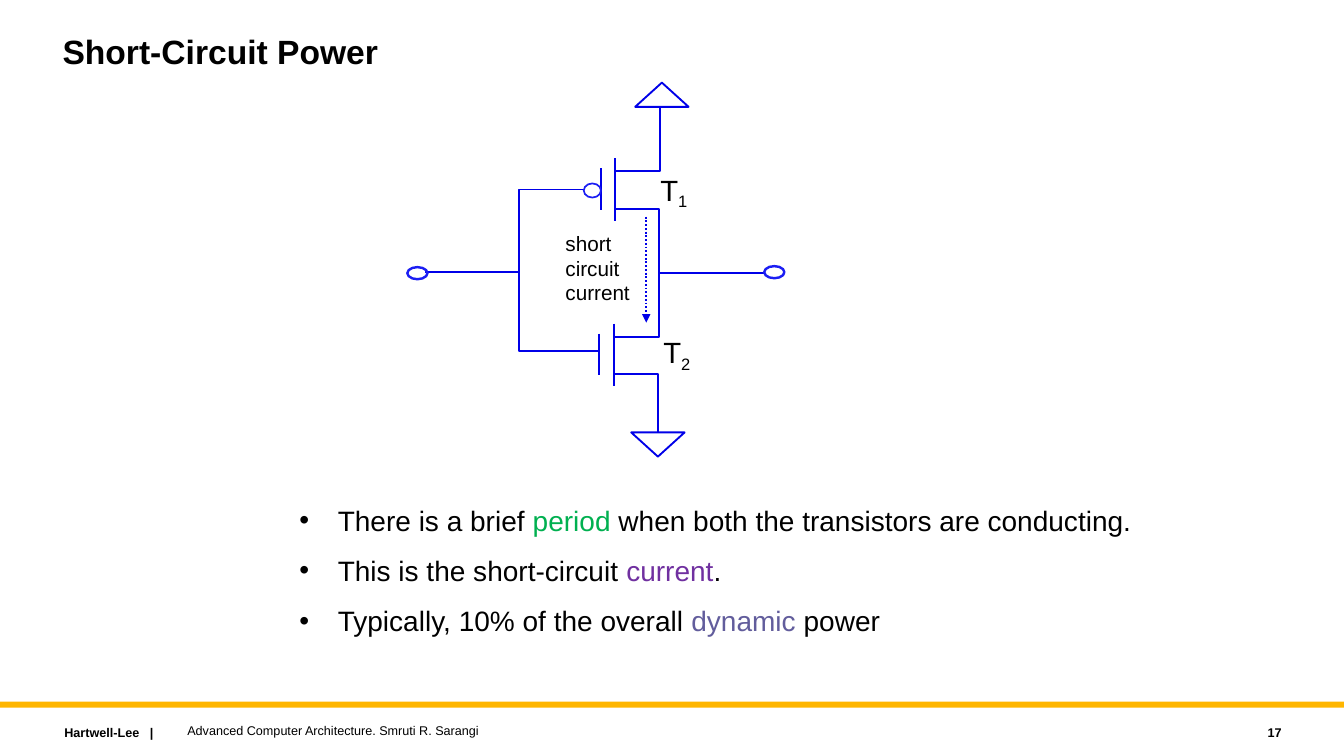
from lxml.etree import SubElement
from pptx import Presentation
from pptx.dml.color import RGBColor
from pptx.enum.dml import MSO_LINE
from pptx.enum.shapes import MSO_CONNECTOR, MSO_SHAPE
from pptx.enum.text import MSO_ANCHOR as ANCHOR, MSO_AUTO_SIZE, PP_ALIGN as ALIGN
from pptx.oxml.ns import qn
from pptx.util import Inches, Pt

BLACK, WIRE, TERMINAL = "000000", "0000E8", "1B1EF3"

WIRES = [
    [(4.22, 2.7), (5.15, 2.7)],
    [(5.79, 1.88), (5.15, 1.88), (5.15, 3.48), (5.94, 3.48)],
    [(5.96, 1.67), (5.96, 2.08)],
    [(6.1, 1.57), (6.1, 2.19)],
    [(6.1, 1.7), (6.55, 1.7), (6.55, 1.06)],
    [(6.1, 2.07), (6.54, 2.07), (6.54, 3.34), (6.09, 3.34)],
    [(5.94, 3.31), (5.94, 3.72)],
    [(6.09, 3.21), (6.09, 3.83)],
    [(6.09, 3.71), (6.53, 3.71), (6.53, 4.29)],
    [(6.54, 2.71), (7.58, 2.71)],
]
BULLETS = [
    [("There is a brief ", BLACK), ("period", "00B050"),
     (" when both the transistors are conducting.", BLACK)],
    [("This is the short-circuit ", BLACK), ("current", "7030A0"), (".", BLACK)],
    [("Typically, 10% of the overall ", BLACK), ("dynamic ", "625D9C"), ("power", BLACK)],
]


def color(value):
    """Turn a hex string into a colour."""
    return RGBColor.from_string(value)


def place(shape, box):
    """Move and size a shape to left, top, width and height in inches."""
    for name, value in zip(("left", "top", "width", "height"), box):
        setattr(shape, name, Inches(value))


def apply(target, values):
    """Set attributes from a dict of format values."""
    for name, value in values.items():
        setattr(target, name, value)


def add_run(paragraph, text, size, hex_color=BLACK, bold=False):
    """Append a formatted run to a paragraph."""
    run = paragraph.add_run()
    run.text = text
    apply(run.font, {"name": "Arial", "size": Pt(size), "bold": bold})
    run.font.color.rgb = color(hex_color)
    return run


def add_text(slide, box, lines, size, bold=False, wrap=True,
             anchor=ANCHOR.TOP, **paragraph_format):
    """Add a text box with one paragraph per line and return its frame."""
    frame = slide.shapes.add_textbox(*map(Inches, box)).text_frame
    apply(frame, {"word_wrap": wrap, "vertical_anchor": anchor})
    for index, line in enumerate(lines):
        paragraph = frame.add_paragraph() if index else frame.paragraphs[0]
        apply(paragraph, paragraph_format)
        add_run(paragraph, line, size, bold=bold)
    return frame


def style_line(shape, hex_color=WIRE, width=1.33):
    """Set the colour and width of an outline."""
    shape.line.color.rgb = color(hex_color)
    shape.line.width = Pt(width)


def add_outline(slide, kind, box, hex_color=WIRE, width=1.33, rotation=0):
    """Add an unfilled preset shape."""
    shape = slide.shapes.add_shape(kind, *map(Inches, box))
    shape.shadow.inherit = False
    shape.fill.background()
    shape.rotation = rotation
    style_line(shape, hex_color, width)


def add_line(slide, start, end):
    """Add a straight wire between two points."""
    line = slide.shapes.add_connector(
        MSO_CONNECTOR.STRAIGHT, *map(Inches, (*start, *end)))
    SubElement(line._element.spPr, qn("a:effectLst"))
    style_line(line)
    return line


def add_wire(slide, points):
    """Add a wire through points, bent where there are more than two."""
    if len(points) == 2:
        add_line(slide, *points)
        return
    corners = [(Inches(x), Inches(y)) for x, y in points]
    builder = slide.shapes.build_freeform(*corners[0])
    builder.add_line_segments(corners[1:], close=False)
    shape = builder.convert_to_shape()
    shape.shadow.inherit = False
    shape.fill.background()
    style_line(shape)


def add_current_arrow(slide):
    """Add the dotted arrow of the short-circuit current."""
    arrow = add_line(slide, (6.41, 2.15), (6.41, 3.2))
    arrow.line.dash_style = MSO_LINE.ROUND_DOT
    SubElement(arrow.line._get_or_add_ln(), qn("a:tailEnd"), type="triangle")


def add_transistor_label(slide, left, top, number):
    """Add a T label with a subscript number."""
    frame = add_text(slide, (left, top, 0.49, 0.46), ["T"], 20.9, wrap=False)
    subscript = add_run(frame.paragraphs[0], number, 20.3)
    subscript._r.get_or_add_rPr().set("baseline", "-22000")


def add_circuit(slide):
    """Draw the inverter with its wires, terminals and labels."""
    for points in WIRES:
        add_wire(slide, points)
    add_outline(slide, MSO_SHAPE.OVAL, (5.79, 1.82, 0.17, 0.14), TERMINAL, 1.23)
    for left, top in ((4.04, 2.65), (7.58, 2.64)):
        add_outline(slide, MSO_SHAPE.OVAL, (left, top, 0.2, 0.12), TERMINAL, 1.73)
    for left, top, rotation in ((6.3, 0.82, 0), (6.26, 4.29, 180)):
        add_outline(slide, MSO_SHAPE.ISOSCELES_TRIANGLE,
                    (left, top, 0.53, 0.24), rotation=rotation)
    add_current_arrow(slide)
    add_transistor_label(slide, 6.45, 1.66, "1")
    add_transistor_label(slide, 6.48, 3.27, "2")
    add_text(slide, (5.51, 2.25, 0.85, 0.83), ["short", "circuit", "current"],
             14.8, wrap=False, line_spacing=Pt(17.4))


def fill_title(title):
    """Place and write the slide title."""
    place(title, (0.52, 0.3, 10, 0.9))
    apply(title.text_frame, {"vertical_anchor": ANCHOR.TOP, "word_wrap": True,
                             "auto_size": MSO_AUTO_SIZE.NONE})
    paragraph = title.text_frame.paragraphs[0]
    apply(paragraph, {"alignment": ALIGN.LEFT, "line_spacing": 0.9})
    add_run(paragraph, "Short-Circuit Power", 24, bold=True)


def fill_body(body):
    """Place and write the bulleted list."""
    place(body, (2.87, 4.94, 8.63, 1.57))
    frame = body.text_frame
    apply(frame, {"word_wrap": True, "auto_size": MSO_AUTO_SIZE.NONE})
    for index, parts in enumerate(BULLETS):
        paragraph = frame.add_paragraph() if index else frame.paragraphs[0]
        paragraph.space_before = Pt(12 if index else 0)
        properties = paragraph._p.get_or_add_pPr()
        properties.set("marL", str(Inches(0.38)))
        properties.set("indent", str(-Inches(0.38)))
        SubElement(properties, qn("a:buFont"), typeface="Arial")
        SubElement(properties, qn("a:buChar"), char="•")
        for text, hex_color in parts:
            add_run(paragraph, text, 20, hex_color)


def add_footer(slide):
    """Add the footer bar, publisher, book and page number."""
    bar = slide.shapes.add_shape(
        MSO_SHAPE.RECTANGLE, *map(Inches, (0, 6.96, 13.33, 0.06)))
    bar.shadow.inherit = False
    bar.fill.solid()
    bar.fill.fore_color.rgb = color("FFB600")
    bar.line.fill.background()
    add_text(slide, (0.54, 7.14, 2.27, 0.25), ["Hartwell-Lee   |"], 9, bold=True)
    add_text(slide, (1.76, 7.12, 8, 0.25),
             ["Advanced Computer Architecture. Smruti R. Sarangi"], 9,
             anchor=ANCHOR.MIDDLE)
    add_text(slide, (11.41, 7.14, 1.4, 0.25), ["17"], 9, bold=True,
             anchor=ANCHOR.MIDDLE, alignment=ALIGN.RIGHT)


def main():
    """Build and save the slide."""
    presentation = Presentation()
    apply(presentation, {"slide_width": Inches(13.33), "slide_height": Inches(7.5)})
    slide = presentation.slides.add_slide(presentation.slide_layouts[1])
    fill_title(slide.shapes.title)
    fill_body(slide.placeholders[1])
    add_circuit(slide)
    add_footer(slide)
    presentation.save("out.pptx")


if __name__ == "__main__":
    main()
